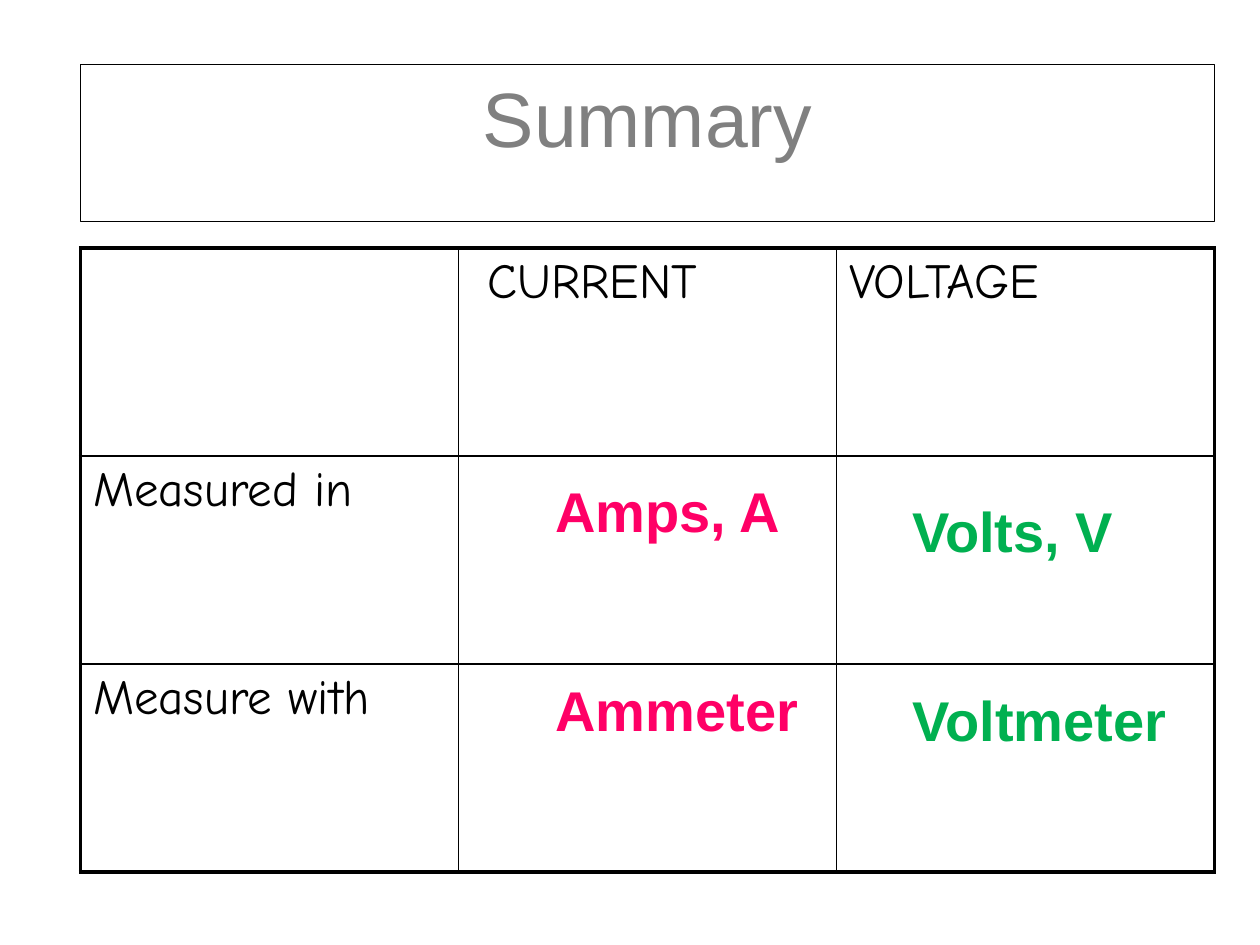
from lxml import etree
from pptx import Presentation
from pptx.dml.color import RGBColor
from pptx.enum import text
from pptx.oxml import ns
from pptx.util import Pt

TITLE = "Summary"
ROWS = [
    ["", " CURRENT", "VOLTAGE"],
    ["Measured in", "", ""],
    ["Measure with", "", ""],
]
BLACK, WHITE, GREY, PINK, GREEN = "000000", "FFFFFF", "808080", "FF0066", "00B050"
AMPS_LEFT, VOLTS_LEFT = 310.3, 514.1
ANSWERS = [  # wording, left, top, width, colour
    ("Amps, A", AMPS_LEFT, 268.6, 226.8, PINK),
    ("Voltmeter", VOLTS_LEFT, 388.1, 226.8, GREEN),
    ("Ammeter", AMPS_LEFT, 382.3, 169.9, PINK),
    ("Volts, V", VOLTS_LEFT, 280.1, 169.9, GREEN),
]
LEFT, WIDTH = 46.1, 648
TABLE_TOP, ROW_HEIGHT = 141.8, 118.8
OUTER, INNER = 2.25, 1


def colour(code):
    return RGBColor.from_string(code)


def add_span(para, words, font, size, code, bold=False):
    span = para.add_run()
    span.text = words
    span.font.name = font
    span.font.size = Pt(size)
    span.font.bold = bold
    span.font.color.rgb = colour(code)


def space_before(para, percent):
    """Set the gap above a paragraph as a share of its line height."""
    gap = etree.SubElement(para._p.get_or_add_pPr(), ns.qn("a:spcBef"))
    etree.SubElement(gap, ns.qn("a:spcPct")).set("val", str(percent * 1000))


def add_border(cell, side, weight):
    line = etree.SubElement(cell._tc.get_or_add_tcPr(), ns.qn(f"a:ln{side}"))
    line.set("w", str(Pt(weight)))
    fill = etree.SubElement(line, ns.qn("a:solidFill"))
    etree.SubElement(fill, ns.qn("a:srgbClr")).set("val", BLACK)


def add_title(page):
    title = page.shapes.title
    title.left, title.top = Pt(LEFT), Pt(36.7)
    title.width, title.height = Pt(WIDTH), Pt(90)
    title.fill.solid()
    title.fill.fore_color.rgb = colour(WHITE)
    title.line.color.rgb = colour(BLACK)
    title.line.width = Pt(0.75)
    frame = title.text_frame
    frame.auto_size = text.MSO_AUTO_SIZE.NONE
    frame.vertical_anchor = text.MSO_ANCHOR.TOP
    para = frame.paragraphs[0]
    para.alignment = text.PP_ALIGN.CENTER
    add_span(para, TITLE, "Arial", 44, GREY)


def add_summary_table(page):
    row_count, column_count = len(ROWS), len(ROWS[0])
    table = page.shapes.add_table(
        row_count, column_count, Pt(LEFT), Pt(TABLE_TOP),
        Pt(WIDTH), Pt(ROW_HEIGHT * row_count)).table
    table.first_row = table.horz_banding = False
    for r, row in enumerate(ROWS):
        for c, words in enumerate(row):
            cell = table.cell(r, c)
            on_edge = {"L": c == 0, "R": c == column_count - 1,
                       "T": r == 0, "B": r == row_count - 1}
            for side, is_outer in on_edge.items():
                add_border(cell, side, OUTER if is_outer else INNER)
            cell.fill.background()
            if words:
                para = cell.text_frame.paragraphs[0]
                space_before(para, 20)
                add_span(para, words, "Comic Neue", 28, BLACK)


def add_answer(page, words, left, top, width, code):
    box = page.shapes.add_textbox(Pt(left), Pt(top), Pt(width), Pt(45.4))
    frame = box.text_frame
    frame.word_wrap = True
    frame.auto_size = text.MSO_AUTO_SIZE.SHAPE_TO_FIT_TEXT
    para = frame.paragraphs[0]
    space_before(para, 50)
    add_span(para, words, "Arial", 32, code, bold=True)


def main():
    deck = Presentation()
    deck.slide_width, deck.slide_height = Pt(720), Pt(540)
    page = deck.slides.add_slide(deck.slide_layouts.get_by_name("Title Only"))
    add_title(page)
    add_summary_table(page)
    for answer in ANSWERS:
        add_answer(page, *answer)
    deck.save("out.pptx")


if __name__ == "__main__":
    main()
